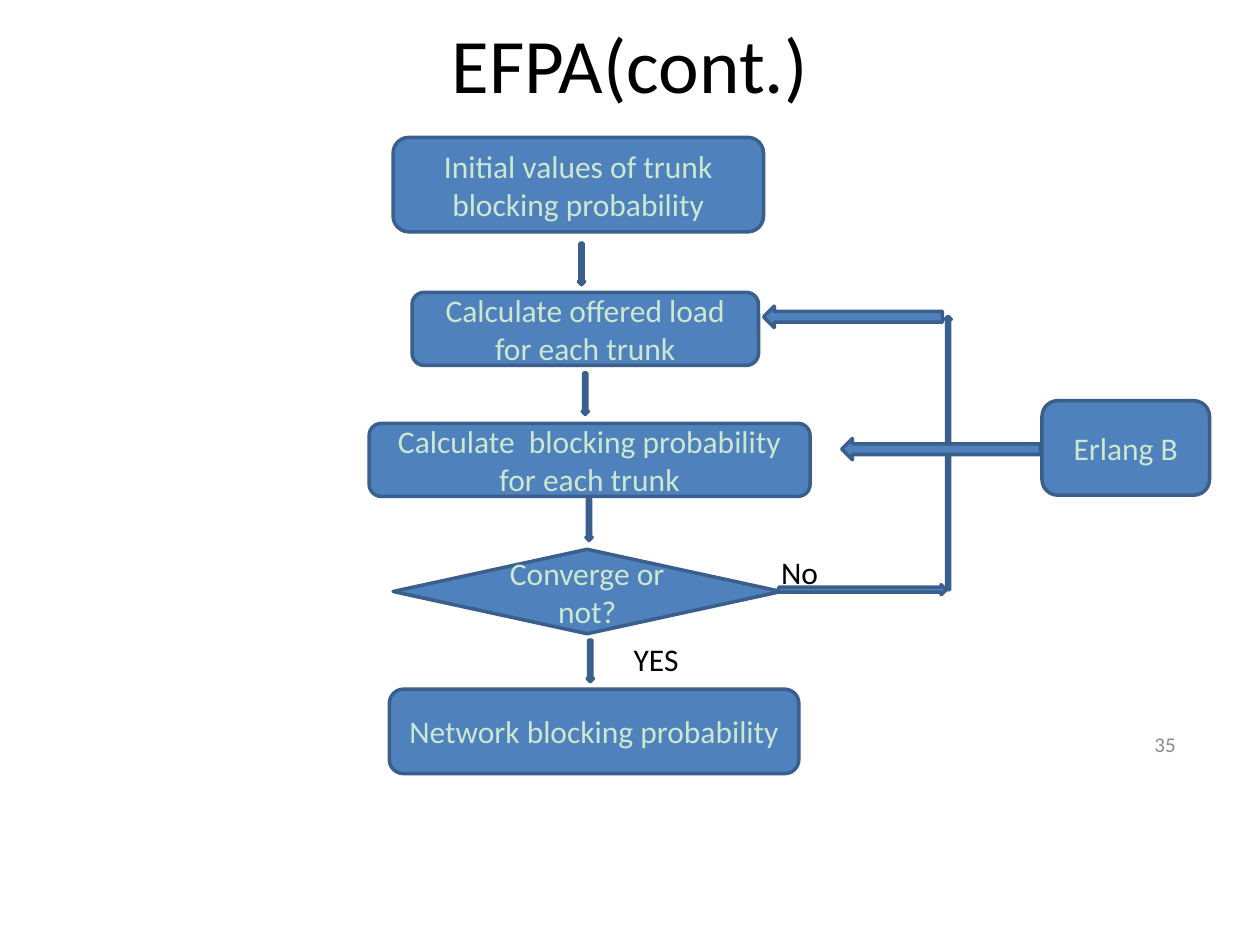
from pptx import Presentation
from pptx.dml.color import RGBColor
from pptx.enum.shapes import MSO_SHAPE
from pptx.enum.text import MSO_ANCHOR, PP_ALIGN
from pptx.util import Inches, Pt

COLORS = {
    "page": "FFFFFF",
    "fill": "4F81BD",
    "line": "3A5F8C",
    "light": "CCE8CF",
    "dark": "000000",
    "gray": "8C8C8C",
}
STEP = MSO_SHAPE.FLOWCHART_ALTERNATE_PROCESS
TEST = MSO_SHAPE.FLOWCHART_DECISION
DOWN = MSO_SHAPE.DOWN_ARROW
LEFT = MSO_SHAPE.LEFT_ARROW
RIGHT = MSO_SHAPE.RIGHT_ARROW
UP = MSO_SHAPE.UP_ARROW


def color(name):
    return RGBColor.from_string(COLORS[name])


def place(box, x, y, w, h):
    left, top = box[:2]
    return Inches(left + x), Inches(top + y), Inches(w), Inches(h)


def write(shape, text, size=18, ink="dark", align=PP_ALIGN.LEFT, anchor=MSO_ANCHOR.TOP):
    frame = shape.text_frame
    frame.word_wrap = True
    frame.vertical_anchor = anchor
    para = frame.paragraphs[0]
    para.alignment = align
    run = para.add_run()
    run.text = text
    run.font.name = "Calibri"
    run.font.size = Pt(size)
    run.font.color.rgb = color(ink)


def label(slide, area, text, **style):
    write(slide.shapes.add_textbox(*area), text, **style)


def block(slide, kind, area, text=None):
    shape = slide.shapes.add_shape(kind, *area)
    shape.shadow.inherit = False
    shape.fill.solid()
    shape.fill.fore_color.rgb = color("fill")
    shape.line.color.rgb = color("line")
    shape.line.width = Pt(2)
    if text:
        write(shape, text, ink="light", align=PP_ALIGN.CENTER, anchor=MSO_ANCHOR.MIDDLE)


def header(slide, box):
    label(slide, place(box, 0, 0, *box[2:]), "EFPA(cont.)", size=44,
          align=PP_ALIGN.CENTER, anchor=MSO_ANCHOR.MIDDLE)


def footer(slide, box):
    label(slide, place(box, 0, 0, *box[2:]), "35", size=12, ink="gray",
          align=PP_ALIGN.RIGHT, anchor=MSO_ANCHOR.MIDDLE)


def flow(slide, box):
    steps = [
        (STEP, 0.19, 0, 2.94, 0.75, "Initial values of trunk blocking probability"),
        (STEP, 0.34, 1.23, 2.75, 0.58, "Calculate offered load for each trunk"),
        (STEP, 0, 2.27, 3.5, 0.58, "Calculate  blocking probability for each trunk"),
        (TEST, 0.19, 3.27, 3.08, 0.67, "Converge or not?"),
        (STEP, 0.16, 4.38, 3.25, 0.67, "Network blocking probability"),
    ]
    for kind, x, y, w, h, text in steps:
        block(slide, kind, place(box, x, y, w, h), text)
    for x, y in [(1.66, 0.84), (1.69, 1.87), (1.72, 2.87), (1.73, 3.99)]:
        block(slide, DOWN, place(box, x, y, 0.05, 0.33))
    label(slide, place(box, 2, 3.94, 0.92, 0.42), "YES")


def loop(slide, box):
    block(slide, RIGHT, place(box, 0.12, 2.21, 1.33, 0.08))
    block(slide, UP, place(box, 1.44, 0.08, 0.05, 2.17))
    block(slide, LEFT, place(box, 0, 0, 1.42, 0.17))
    label(slide, place(box, 0.04, 1.91, 0.92, 0.42), "No")


def source(slide, box):
    block(slide, STEP, place(box, 1.59, 0, 1.33, 0.75), "Erlang B")
    block(slide, LEFT, place(box, 0, 0.3, 1.58, 0.17))


def main():
    deck = Presentation()
    deck.slide_width, deck.slide_height = Inches(10), Inches(7.5)
    slide = deck.slides.add_slide(deck.slide_layouts[6])
    slide.background.fill.solid()
    slide.background.fill.fore_color.rgb = color("page")
    header(slide, (0.5, 0, 9, 1))
    footer(slide, (7.1, 5.71, 2.33, 0.4))
    flow(slide, (2.93, 1.09, 3.5, 5.05))
    loop(slide, (6.06, 2.43, 1.49, 2.33))
    source(slide, (6.68, 3.18, 2.92, 0.75))
    deck.save("out.pptx")


if __name__ == "__main__":
    main()
